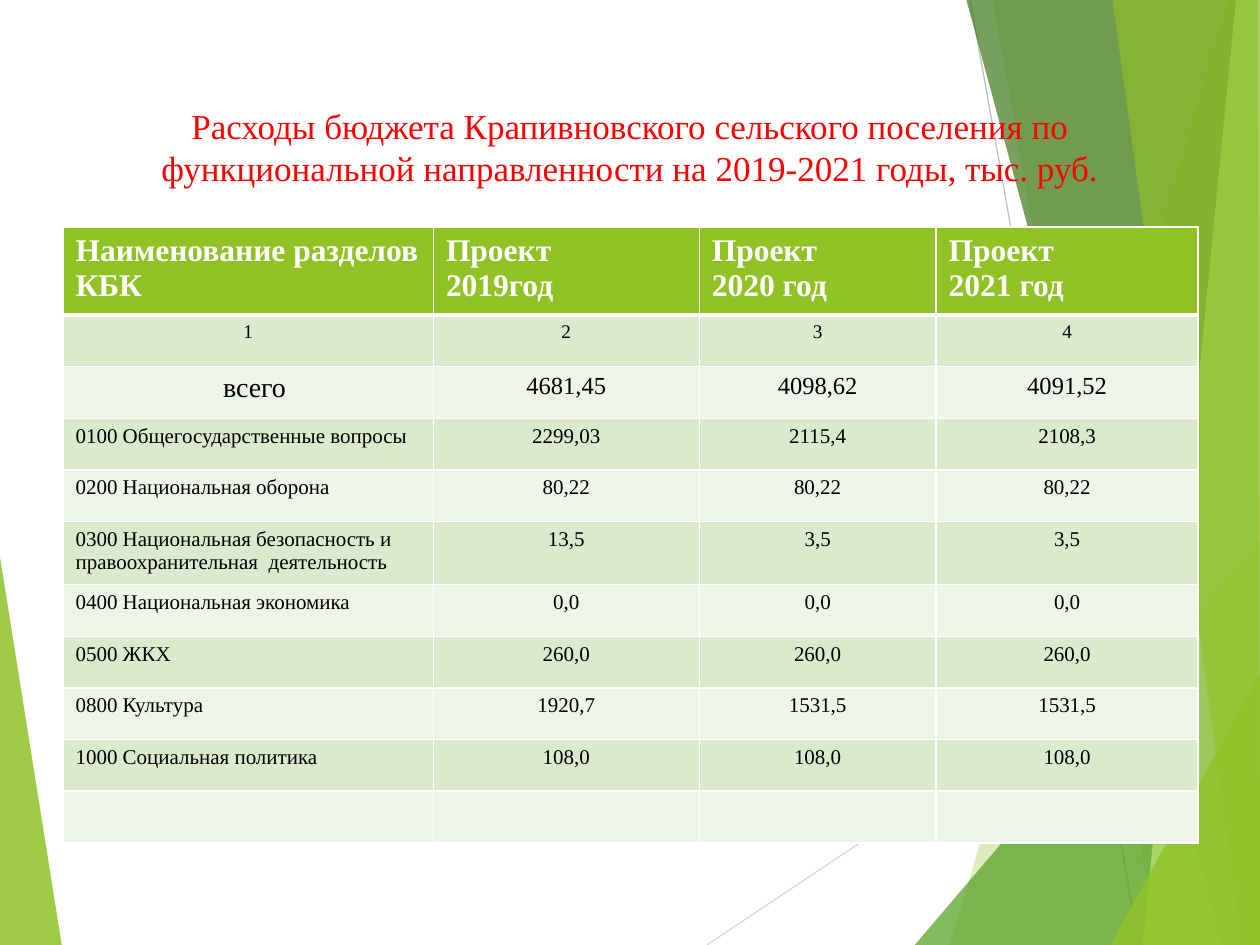
import pptx
import pptx.dml.color
import pptx.enum.text
import pptx.oxml
import pptx.oxml.ns
import pptx.util
from pptx.util import Inches

COLORS = {
    "lime": "90C226", "green": "54A021", "forest": "3F7819", "pale": "C0E474",
    "band_dark": "DBE9CD", "band_light": "EEF4E8", "white": "FFFFFF",
    "black": "000000", "red": "FF0000", "line_light": "D9D9D9", "line": "BFBFBF",
}
FONT = "Times New Roman"
CENTER = pptx.enum.text.PP_ALIGN.CENTER
LEFT = pptx.enum.text.PP_ALIGN.LEFT
MIDDLE = pptx.enum.text.MSO_ANCHOR.MIDDLE


def rgb(name):
    return pptx.dml.color.RGBColor.from_string(COLORS[name])


def write_text(frame, text, size=12, color="black", bold=False, align=LEFT):
    """Fill a text frame, one paragraph for each line of text."""
    for index, line in enumerate(text.split("\n")):
        para = frame.paragraphs[0] if index == 0 else frame.add_paragraph()
        para.alignment = align
        span = para.add_run()
        span.text = line
        span.font.name = FONT
        span.font.size = pptx.util.Pt(size)
        span.font.bold = bold
        span.font.color.rgb = rgb(color)


class SlideBuilder:
    def __init__(self, deck):
        self.page = deck.slides.add_slide(deck.slide_layouts[6])

    def facet(self, points, color, opacity):
        """Draw a borderless translucent polygon."""
        corners = [(Inches(x), Inches(y)) for x, y in points]
        builder = self.page.shapes.build_freeform(*corners[0])
        builder.add_line_segments(corners[1:], close=True)
        shape = builder.convert_to_shape()
        shape.shadow.inherit = False
        shape.line.fill.background()
        shape.fill.solid()
        shape.fill.fore_color.rgb = rgb(color)
        tint = shape.fill._xPr.find(".//" + pptx.oxml.ns.qn("a:srgbClr"))
        tint.append(pptx.oxml.parse_xml(
            f'<a:alpha {pptx.oxml.ns.nsdecls("a")} val="{opacity * 1000}"/>'))

    def line(self, start, end, color):
        line = self.page.shapes.add_connector(
            pptx.enum.shapes.MSO_CONNECTOR.STRAIGHT,
            *(Inches(value) for value in start + end))
        line.line.color.rgb = rgb(color)
        line.line.width = pptx.util.Pt(0.75)
        line._element.spPr.append(pptx.oxml.parse_xml(
            f'<a:effectLst {pptx.oxml.ns.nsdecls("a")}/>'))

    def title(self, text, left, top, width, height):
        box = self.page.shapes.add_textbox(
            Inches(left), Inches(top), Inches(width), Inches(height))
        box.text_frame.word_wrap = True
        box.text_frame.vertical_anchor = MIDDLE
        write_text(box.text_frame, text, size=20, color="red", align=CENTER)

    def border(self, cell, bottom):
        """White cell edges; the bottom one may be heavier."""
        properties = cell._tc.get_or_add_tcPr()
        for index, (side, width) in enumerate(
                [("L", 1), ("R", 1), ("T", 1), ("B", bottom)]):
            properties.insert(index, pptx.oxml.parse_xml(
                f'<a:ln{side} {pptx.oxml.ns.nsdecls("a")} w="{width * 12700}">'
                f'<a:solidFill><a:srgbClr val="{COLORS["white"]}"/></a:solidFill>'
                f'</a:ln{side}>'))

    def table(self, rows, left, top, widths, heights):
        table = self.page.shapes.add_table(
            len(rows), len(widths), Inches(left), Inches(top),
            Inches(sum(widths)), Inches(sum(heights))).table
        for column, width in zip(table.columns, widths):
            column.width = Inches(width)
        for row, height in zip(table.rows, heights):
            row.height = Inches(height)
        for r, row in enumerate(rows):
            for c, text in enumerate(row):
                cell = table.cell(r, c)
                cell.fill.solid()
                cell.fill.fore_color.rgb = rgb(
                    "lime" if r == 0 else "band_dark" if r % 2 else "band_light")
                self.border(cell, bottom=3 if r == 0 else 1)
                if text:
                    write_text(cell.text_frame, text, **cell_format(r, c))
        # The total label sits slightly right of centre
        table.cell(2, 0).margin_left = Inches(0.2)


def cell_format(row, column):
    if row == 0:
        return {"size": 18, "color": "white", "bold": True}
    if row == 1:
        return {"size": 11, "align": CENTER}
    if row == 2:
        return {"size": 14 if column else 16, "align": CENTER}
    return {"size": 12, "align": CENTER if column else LEFT}


ROWS = [
    ("Наименование разделов КБК", "Проект\n2019год", "Проект\n2020 год", "Проект\n2021 год"),
    ("1", "2", "3", "4"),
    ("всего", "4681,45", "4098,62", "4091,52"),
    ("0100 Общегосударственные вопросы", "2299,03", "2115,4", "2108,3"),
    ("0200 Национальная оборона", "80,22", "80,22", "80,22"),
    ("0300 Национальная безопасность и правоохранительная  деятельность",
     "13,5", "3,5", "3,5"),
    ("0400 Национальная экономика", "0,0", "0,0", "0,0"),
    ("0500 ЖКХ", "260,0", "260,0", "260,0"),
    ("0800 Культура", "1920,7", "1531,5", "1531,5"),
    ("1000 Социальная политика", "108,0", "108,0", "108,0"),
    ("", "", "", ""),
]

# Points, colour and opacity of the facets at the right edge
RIGHT_FACETS = [
    ([(9.75, 0), (7.54, 7.5), (10, 7.5), (10, 0)], "lime", 30),
    ([(7.88, 0), (9.19, 7.5), (10, 7.5), (10, 0)], "lime", 20),
    ([(7.26, 7.5), (10, 4.29), (10, 7.5)], "green", 72),
    ([(7.67, 0), (9.7, 7.5), (10, 7.5), (10, 0)], "forest", 70),
    ([(9.81, 0), (9.07, 7.5), (10, 7.5), (10, 0)], "pale", 70),
    ([(8.83, 0), (9.86, 7.5), (10, 7.5), (9.98, 0)], "lime", 65),
    ([(8.81, 7.5), (10, 5.35), (10, 7.5)], "lime", 80),
]


def main():
    deck = pptx.Presentation()
    deck.slide_width, deck.slide_height = Inches(10), Inches(7.5)
    slide = SlideBuilder(deck)

    # Background decoration
    slide.facet([(0, 4.42), (0.49, 7.5), (0, 7.5)], "lime", 85)
    slide.line((5.61, 7.5), (10, 4.57), "line_light")
    slide.line((7.7, 0), (9.04, 7.5), "line")
    for points, color, opacity in RIGHT_FACETS:
        slide.facet(points, color, opacity)

    # Title and budget table
    slide.title("Расходы бюджета Крапивновского сельского поселения по "
                "функциональной направленности на 2019-2021 годы, тыс. руб.",
                0.5, 0.77, 9, 0.79)
    heights = [0.65] + [0.41] * 4 + [0.47] + [0.41] * 5
    slide.table(ROWS, 0.5, 1.8, [2.94, 2.11, 1.88, 2.08], heights)
    deck.save("out.pptx")


if __name__ == "__main__":
    main()
